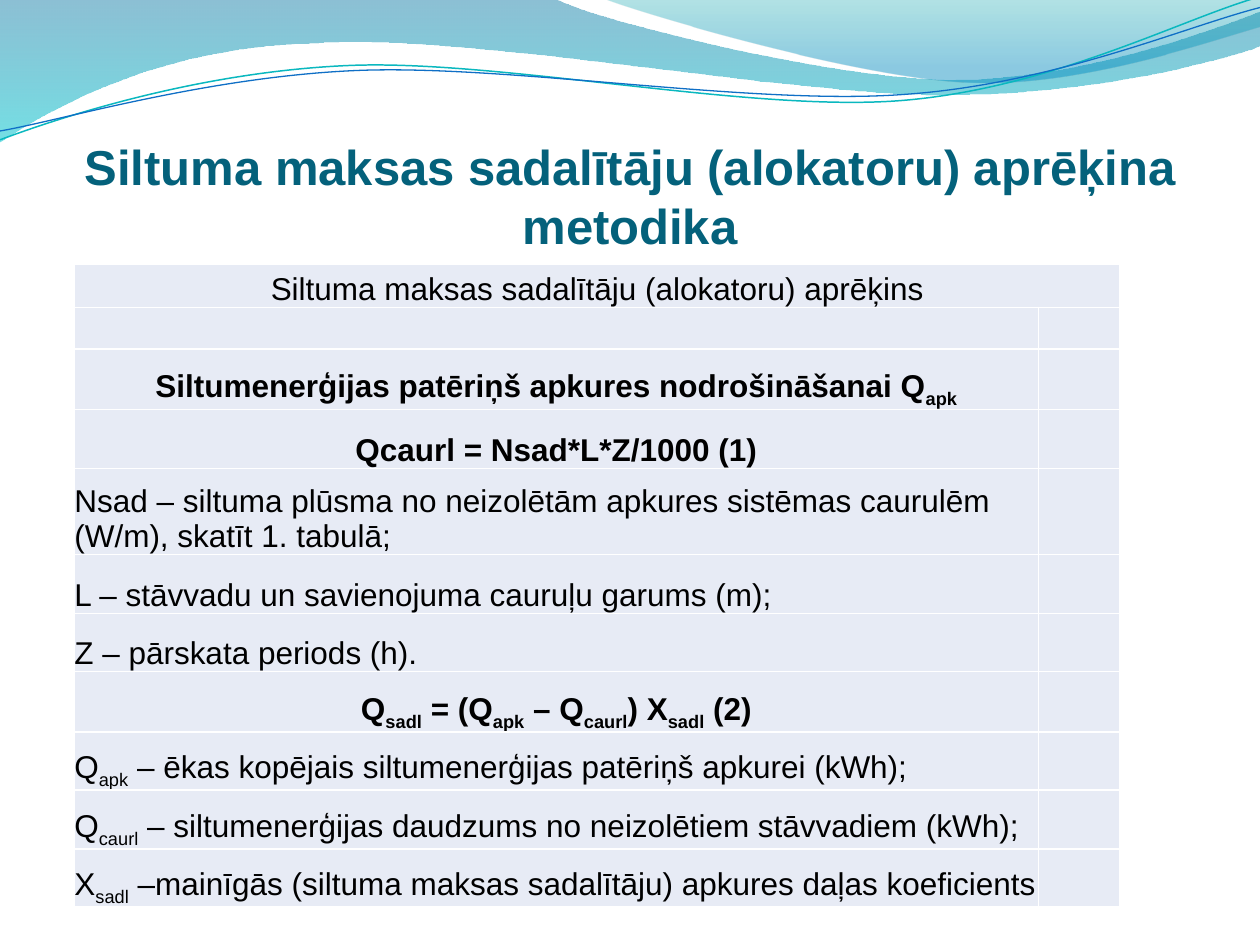
"""Builds a slide with a wave header and a table of the heat allocator calculation method."""
from math import cos, radians, sin

from lxml import etree
from pptx import Presentation
from pptx.dml.color import RGBColor
from pptx.enum.text import MSO_ANCHOR, MSO_AUTO_SIZE, PP_ALIGN
from pptx.oxml.ns import qn
from pptx.util import Inches, Pt

CENTER, LEFT = PP_ALIGN.CENTER, PP_ALIGN.LEFT
BOTTOM = MSO_ANCHOR.BOTTOM
NO_FIT = MSO_AUTO_SIZE.NONE
FONT = "Arial"
TITLE_COLOR = RGBColor(0x04, 0x61, 0x7B)
BLACK = RGBColor(0, 0, 0)
CELL_FILL = RGBColor(0xE7, 0xEB, 0xF5)
BORDER = "FFFFFF"
WAVE_TILT = -2.7

TITLE = "Siltuma maksas sadalītāju (alokatoru) aprēķina metodika"
ROWS = [
    (0.34, CENTER, False, "Siltuma maksas sadalītāju (alokatoru) aprēķins"),
    (0.33, LEFT, False, ""),
    (0.48, CENTER, True, "Siltumenerģijas patēriņš apkures nodrošināšanai Q|apk"),
    (0.47, CENTER, True, "Qcaurl = Nsad*L*Z/1000 (1)"),
    (0.68, LEFT, False, "Nsad – siltuma plūsma no neizolētām apkures sistēmas caurulēm "
                        "(W/m), skatīt 1. tabulā;"),
    (0.47, LEFT, False, "L – stāvvadu un savienojuma cauruļu garums (m);"),
    (0.46, LEFT, False, "Z – pārskata periods (h)."),
    (0.48, CENTER, True, "Q|sadl| = (Q|apk| – Q|caurl|) X|sadl| (2)"),
    (0.46, LEFT, False, "Q|apk| – ēkas kopējais siltumenerģijas patēriņš apkurei (kWh);"),
    (0.47, LEFT, False, "Q|caurl| – siltumenerģijas daudzums no neizolētiem stāvvadiem (kWh);"),
    (0.46, LEFT, False, "X|sadl| –mainīgās (siltuma maksas sadalītāju) apkures daļas koeficients"),
]
COLS = [7.65, 0.65]

BANDS = [
    ([(0, 0), (4.4, -0.01),
      (4.76, 0.17, 6.64, 0.63, 7.58, 0.63), (8.53, 0.63, 9.58, 0.26, 10, 0.09),
      (10.01, 0.36),
      (9.83, 0.44, 8.7, 0.76, 7.46, 0.75), (6.22, 0.75, 3.82, 0.28, 2.57, 0.34),
      (1.29, 0.36, 0.46, 0.83, -0.01, 1.13), (0, 0)],
     [(0, RGBColor(0x00, 0x74, 0xA1), 45), (1, RGBColor(0x00, 0xC6, 0xCF), 55)]),
    ([(4.79, -0.01),
      (5.09, 0.11, 6.82, 0.62, 7.69, 0.65), (8.56, 0.69, 9.61, 0.32, 10, 0.21),
      (10, 0), (4.79, -0.01)],
     [(0, RGBColor(0x00, 0xA1, 0xA9), 30), (0.8, RGBColor(0x00, 0x8B, 0xBF), 45)]),
]
WAVES = [
    ([(0, 1.11), (0.48, 0.93, 1.58, 0.57, 2.77, 0.52),
      (3.95, 0.47, 5.93, 0.89, 7.13, 0.8), (8.33, 0.71, 9.38, 0.15, 9.98, -0.02)],
     (4.99, 0.57), RGBColor(0x0A, 0xB8, 0xBF), 0.85),
    ([(0, 1.04), (0.47, 0.96, 1.64, 0.61, 2.83, 0.56),
      (4.03, 0.51, 5.97, 0.84, 7.17, 0.75), (8.36, 0.67, 9.41, 0.21, 10, 0.06)],
     (5, 0.59), RGBColor(0x0F, 0x6F, 0xC6), 0.75),
]


def pairs(seg):
    return list(zip(seg[::2], seg[1::2]))


def turn(segments, center, degrees):
    cx, cy = center
    c, n = cos(radians(degrees)), sin(radians(degrees))
    return [sum(((cx + (x - cx) * c - (y - cy) * n, cy + (x - cx) * n + (y - cy) * c)
                 for x, y in pairs(seg)), ()) for seg in segments]


def add_curve(s, segments, close):
    anchors = [(Inches(seg[-2]), Inches(seg[-1])) for seg in segments]
    builder = s.shapes.build_freeform(*anchors[0])
    builder.add_line_segments(anchors[1:], close=close)
    sp = builder.convert_to_shape()
    sp.shadow.inherit = False
    lines = list(sp._element.iter(qn("a:lnTo")))
    for line, seg in zip(lines, segments[1:]):
        if len(seg) == 6:
            line.tag = qn("a:cubicBezTo")
            for i, (x, y) in enumerate(pairs(seg)[:2]):
                pt = etree.Element(qn("a:pt"), x=str(Inches(x) - sp.left),
                                   y=str(Inches(y) - sp.top))
                line.insert(i, pt)
    return sp


def add_band(s, segments, stops):
    sp = add_curve(s, segments, True)
    sp.line.fill.background()
    sp.fill.gradient()
    sp.fill.gradient_angle = 270
    for stop, (position, color, _) in zip(sp.fill.gradient_stops, stops):
        stop.position = position
        stop.color.rgb = color
    colors = sp._element.spPr.iter(qn("a:srgbClr"))
    for clr, (_, _, opacity) in zip(list(colors), stops):
        etree.SubElement(clr, qn("a:alpha")).set("val", str(opacity * 1000))


def add_wave(s, segments, center, color, width):
    sp = add_curve(s, turn(segments, center, -WAVE_TILT), False)
    sp.rotation = WAVE_TILT
    sp.fill.background()
    sp.line.color.rgb = color
    sp.line.width = Pt(width)


def add_run(p, text, size, color, bold):
    r = p.add_run()
    r.text = text
    r.font.name, r.font.size, r.font.bold = FONT, Pt(size), bold
    r.font.color.rgb = color
    return r


def format_cell(cell):
    cell.margin_left = cell.margin_right = cell.margin_top = cell.margin_bottom = 0
    cell.vertical_anchor = BOTTOM
    tcPr = cell._tc.get_or_add_tcPr()
    for side in ("lnL", "lnR", "lnT", "lnB"):
        ln = etree.SubElement(tcPr, qn("a:" + side), w=str(Pt(1)))
        fill = etree.SubElement(ln, qn("a:solidFill"))
        etree.SubElement(fill, qn("a:srgbClr"), val=BORDER)
    cell.fill.solid()
    cell.fill.fore_color.rgb = CELL_FILL


def add_method_table(s):
    heights = [row[0] for row in ROWS]
    table = s.shapes.add_table(len(ROWS), len(COLS), Inches(0.59), Inches(2.1),
                               Inches(sum(COLS)), Inches(sum(heights))).table
    for col, width in zip(table.columns, COLS):
        col.width = Inches(width)
    for row, height in zip(table.rows, heights):
        row.height = Inches(height)
    for cell in table.iter_cells():
        format_cell(cell)
    table.cell(0, 0).merge(table.cell(0, 1))
    for i, (_, align, bold, text) in enumerate(ROWS):
        p = table.cell(i, 0).text_frame.paragraphs[0]
        p.alignment = align
        for k, piece in enumerate(text.split("|") if text else []):
            r = add_run(p, piece, 18, BLACK, bold)
            if k % 2:
                r.font._element.set("baseline", "-25000")


def add_title(s):
    sp = s.shapes.title
    sp.left, sp.top, sp.width, sp.height = map(Inches, (0.5, 0.77, 9, 1.25))
    tf = sp.text_frame
    tf.word_wrap, tf.auto_size, tf.vertical_anchor = True, NO_FIT, BOTTOM
    tf.margin_left = tf.margin_right = tf.margin_bottom = 0
    tf.margin_top = Inches(0.05)
    p = tf.paragraphs[0]
    p.alignment = CENTER
    add_run(p, TITLE, 28, TITLE_COLOR, True)


def main():
    prs = Presentation()
    prs.slide_width, prs.slide_height = Inches(10), Inches(7.5)
    s = prs.slides.add_slide(prs.slide_layouts[5])
    for band in BANDS:
        add_band(s, *band)
    for wave in WAVES:
        add_wave(s, *wave)
    add_title(s)
    add_method_table(s)
    prs.save("out.pptx")


if __name__ == "__main__":
    main()
